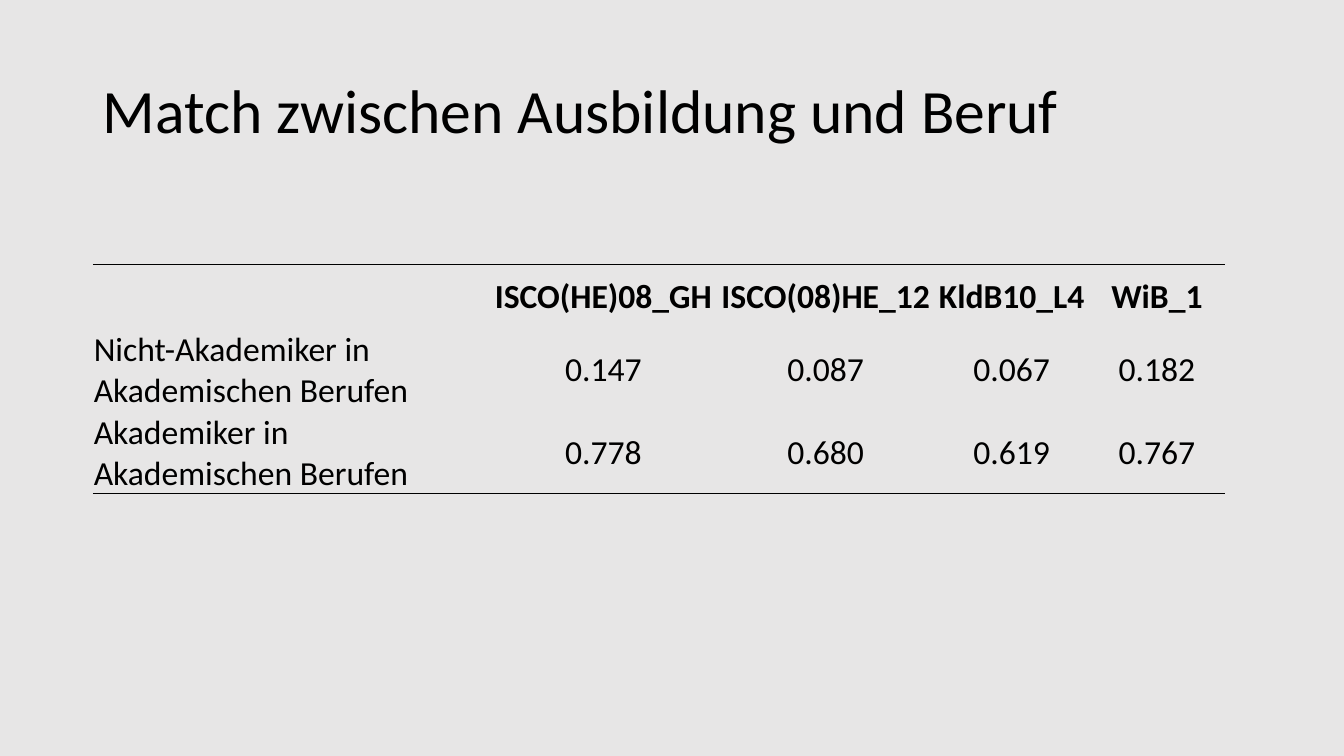
"""Build the slide on the match between education and occupation."""
from lxml import etree
from pptx import Presentation
from pptx import util as u
from pptx.dml.color import RGBColor
from pptx.enum import text
from pptx.oxml import ns

TITLE = "Match zwischen Ausbildung und Beruf"
ROWS = [
    ("", "ISCO(HE)08_GH", "ISCO(08)HE_12", "KldB10_L4", "WiB_1"),
    ("Nicht-Akademiker in Akademischen Berufen", "0.147", "0.087", "0.067", "0.182"),
    ("Akademiker in Akademischen Berufen", "0.778", "0.680", "0.619", "0.767"),
]
COLS = (3.94, 2.25, 2.16, 1.53, 1.35)
HIGH = (0.64, 0.82, 0.82)
LEFT, TOP = 0.92, 2.62
INK, PAPER = "000000", "E7E6E6"
PLAIN = "{2D5ABB26-0587-4C30-8999-92F81FD0307C}"


def hue(code):
    return RGBColor.from_string(code)


def write(frame, words, size=24, bold=False, align=text.PP_ALIGN.LEFT, space=1.0):
    frame.word_wrap = True
    frame.vertical_anchor = text.MSO_ANCHOR.MIDDLE
    para = frame.paragraphs[0]
    para.alignment, para.line_spacing = align, space
    para.font.size = u.Pt(size)
    if words:
        run = para.add_run()
        run.text = words
        font = run.font
        font.name, font.size, font.bold = "Calibri", u.Pt(size), bold
        font.color.rgb = hue(INK)


def rule(cell, side):
    line = etree.Element(ns.qn("a:" + side), w=str(u.Pt(1)))
    fill = etree.SubElement(line, ns.qn("a:solidFill"))
    etree.SubElement(fill, ns.qn("a:srgbClr"), val=INK)
    cell._tc.get_or_add_tcPr().insert(0, line)


def main():
    deck = Presentation()
    deck.slide_width, deck.slide_height = u.Inches(13.33), u.Inches(7.5)
    slide = deck.slides.add_slide(deck.slide_layouts[6])
    back = slide.background.fill
    back.solid()
    back.fore_color.rgb = hue(PAPER)

    head = slide.shapes.add_textbox(*map(u.Inches, (LEFT, 0.4, 11.5, 1.45)))
    write(head.text_frame, TITLE, size=44, space=0.9)

    box = map(u.Inches, (LEFT, TOP, sum(COLS), sum(HIGH)))
    table = slide.shapes.add_table(len(ROWS), len(COLS), *box).table
    table.first_row = table.horz_banding = False
    table._tbl.tblPr.find(ns.qn("a:tableStyleId")).text = PLAIN
    for col, wide in zip(table.columns, COLS):
        col.width = u.Inches(wide)
    for r, row in enumerate(ROWS):
        table.rows[r].height = u.Inches(HIGH[r])
        for c, words in enumerate(row):
            cell = table.cell(r, c)
            cell.margin_left = cell.margin_right = cell.margin_top = u.Inches(0.01)
            cell.margin_bottom = 0
            cell.vertical_anchor = text.MSO_ANCHOR.MIDDLE
            cell.fill.background()
            align = text.PP_ALIGN.CENTER if c else text.PP_ALIGN.LEFT
            write(cell.text_frame, words, bold=r == 0, align=align)
            if r == 0:
                rule(cell, "lnT")
            if r == len(ROWS) - 1:
                rule(cell, "lnB")

    deck.save("out.pptx")


if __name__ == "__main__":
    main()
